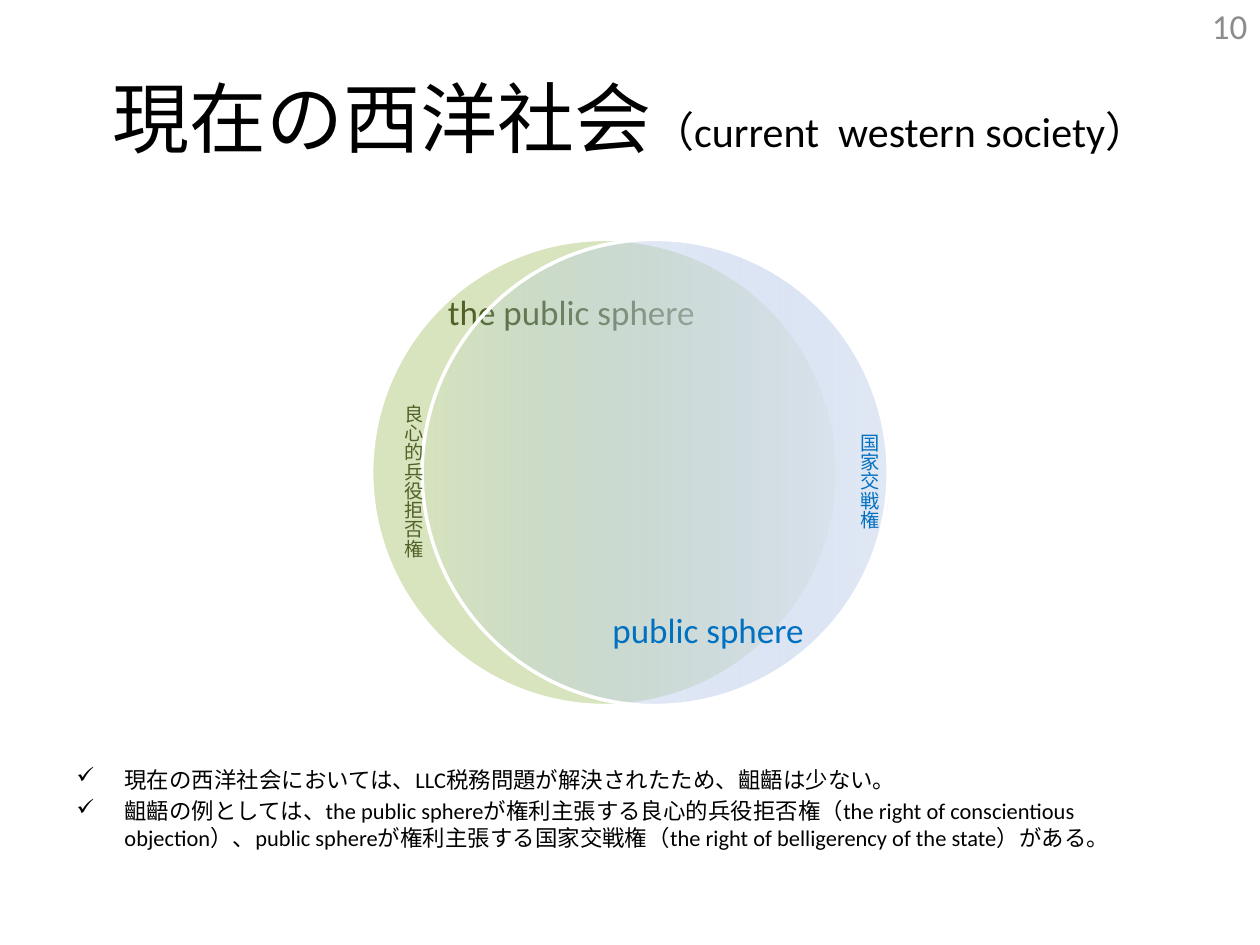
import dataclasses
import typing

import lxml.etree
import pptx
import pptx.dml.color
import pptx.enum.shapes
import pptx.enum.text
import pptx.oxml
import pptx.oxml.ns
import pptx.util

Inches = pptx.util.Inches
Align = pptx.enum.text.PP_ALIGN
Anchor = pptx.enum.text.MSO_ANCHOR
Auto = pptx.enum.text.MSO_AUTO_SIZE

COLORS = {
    "white": "FFFFFF",
    "black": "000000",
    "gray": "8C8C8C",
    "olive": "4F6228",
    "green": "D7E4BD",
    "blue": "0070C0",
}
FADE = [(0, "9AB5E4", 0), (50, "C2D1ED", 50), (100, "E1E8F5", 100)]
FONT = "Calibri"
SIDE = 3.7
TOP = 1.9


@dataclasses.dataclass
class Label:
    box: tuple[float, float, float, float]
    paras: list[list[tuple[str, float]]]
    color: str
    align: typing.Any = Align.LEFT
    anchor: typing.Any = Anchor.TOP
    inset: tuple[float, float, float, float] = (0.1, 0.05, 0.1, 0.05)
    space: float | None = None
    tall: bool = False
    check: bool = False


LABELS = [
    Label((3.47, 2.34, 2.13, 2.83), [[("the public sphere", 20)]], "olive",
          Align.CENTER, inset=(0, 0, 0, 0), space=0.9),
    Label((4.4, 2.34, 2.13, 2.83), [[("public sphere", 20)]], "blue",
          Align.CENTER, Anchor.BOTTOM, inset=(0.31, 0, 0, 0), space=0.9),
    Label((0.5, 0.3, 9, 1.25),
          [[("現在の西洋社会", 44), ("（current  western society）", 24)]],
          "black", Align.CENTER, Anchor.MIDDLE),
    Label((0.51, 6.03, 9, 0.71), [
        [("現在の西洋社会においては、LLC税務問題が解決されたため、齟齬は少ない。", 12.8)],
        [("齟齬の例としては、the public sphereが権利主張する良心的兵役拒否権"
          "（the right of conscientious objection）、public sphereが権利主張する"
          "国家交戦権（the right of belligerency of the state）がある。", 12.8)],
    ], "black", check=True),
    Label((3.03, 3.11, 0.39, 1.34), [[("良心的兵役拒否権", 11)]], "olive", tall=True),
    Label((6.65, 3.34, 0.39, 0.87), [[("国家交戦権", 11)]], "blue", tall=True),
    Label((7.67, 0, 2.33, 0.4), [[("10", 20)]], "gray", Align.RIGHT, Anchor.MIDDLE),
]


def tint(name: str) -> pptx.dml.color.RGBColor:
    return pptx.dml.color.RGBColor.from_string(COLORS[name])


def circle(slide: typing.Any, left: float) -> typing.Any:
    shape = slide.shapes.add_shape(
        pptx.enum.shapes.MSO_SHAPE.OVAL,
        Inches(left), Inches(TOP), Inches(SIDE), Inches(SIDE))
    shape.shadow.inherit = False
    shape.fill.solid()
    shape.fill.fore_color.rgb = tint("green")
    shape.line.color.rgb = tint("white")
    shape.line.width = pptx.util.Pt(2)
    return shape


def fade(shape: typing.Any) -> None:
    stops = "".join(
        f'<a:gs pos="{pos * 1000}"><a:srgbClr val="{color}">'
        f'<a:alpha val="{alpha * 1000}"/></a:srgbClr></a:gs>'
        for pos, color, alpha in FADE)
    grad = pptx.oxml.parse_xml(
        f'<a:gradFill {pptx.oxml.ns.nsdecls("a")} rotWithShape="1">'
        f'<a:gsLst>{stops}</a:gsLst><a:lin ang="0" scaled="0"/></a:gradFill>')
    props = shape.element.spPr
    props.replace(props.find(pptx.oxml.ns.qn("a:solidFill")), grad)


def check(para: typing.Any) -> None:
    props = para._p.get_or_add_pPr()
    props.set("marL", str(Inches(0.38)))
    props.set("indent", str(-Inches(0.38)))
    mark = lxml.etree.Element(pptx.oxml.ns.qn("a:buChar"), char="✓")
    props.insert_element_before(mark, "a:tabLst", "a:defRPr", "a:extLst")
    para.space_before = pptx.util.Pt(2.6)


def write(slide: typing.Any, label: Label) -> None:
    box = slide.shapes.add_textbox(*map(Inches, label.box))
    frame = box.text_frame
    frame.word_wrap = not label.tall
    frame.auto_size = Auto.SHAPE_TO_FIT_TEXT if label.tall else Auto.NONE
    frame.vertical_anchor = label.anchor
    (frame.margin_left, frame.margin_top,
     frame.margin_right, frame.margin_bottom) = map(Inches, label.inset)
    if label.tall:
        frame._txBody.bodyPr.set("vert", "eaVert")
    for index, runs in enumerate(label.paras):
        para = frame.add_paragraph() if index else frame.paragraphs[0]
        para.alignment = label.align
        para.line_spacing = label.space
        para.font.name = FONT
        para.font.color.rgb = tint(label.color)
        sizes = {size for _, size in runs}
        if len(sizes) == 1:
            para.font.size = pptx.util.Pt(runs[0][1])
        for text, size in runs:
            run = para.add_run()
            run.text = text
            if len(sizes) > 1:
                run.font.size = pptx.util.Pt(size)
        if label.check:
            check(para)


def main() -> None:
    deck = pptx.Presentation()
    deck.slide_width, deck.slide_height = Inches(10), Inches(7.5)
    slide = deck.slides.add_slide(deck.slide_layouts[6])
    first, second, *others = LABELS
    circle(slide, 2.95)
    write(slide, first)
    fade(circle(slide, 3.35))
    for label in (second, *others):
        write(slide, label)
    deck.save("out.pptx")


if __name__ == "__main__":
    main()
